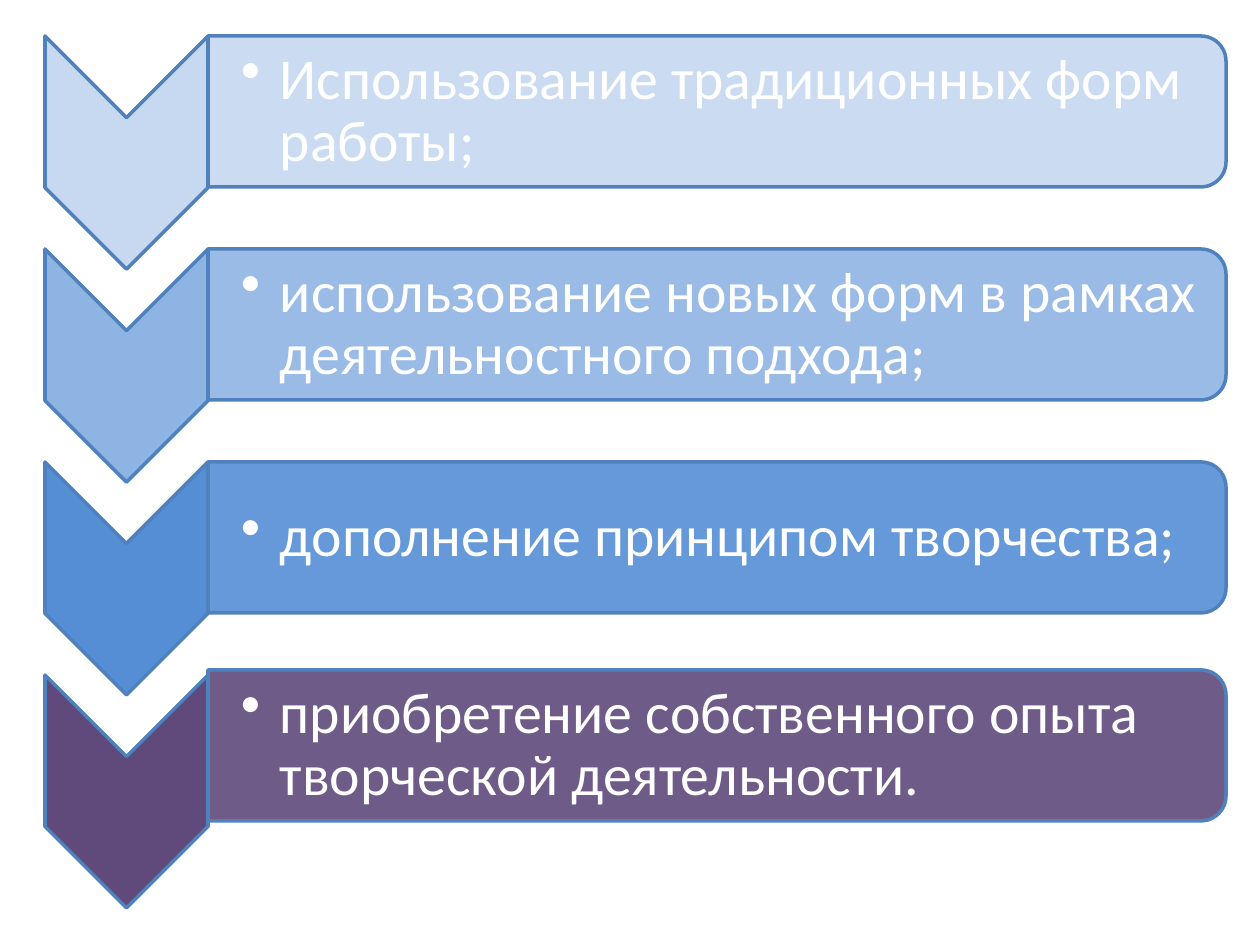
from lxml import etree
from pptx import Presentation
from pptx import util as u
from pptx.dml.color import RGBColor
from pptx.enum import shapes, text
from pptx.oxml.ns import qn

SCALE = 914400 / 126
LEFT, TOP, PITCH = 45, 36, 213
CHEVRON_WIDTH, CHEVRON_HEIGHT = 163, 233
BAR_LEFT, BAR_WIDTH, BAR_HEIGHT = 208, 1018, 151
INDENT = 39
STEPS = [
    ("Использование традиционных форм работы;", "C6D9F1", 0),
    ("использование новых форм в рамках деятельностного подхода;", "8EB4E3", 0),
    ("дополнение принципом творчества;", "558ED5", 0),
    ("приобретение собственного опыта творческой деятельности.", "604A7B", -5),
]


def px(length):
    """Turn pixels into EMU."""
    return u.Emu(round(length * SCALE))


def color(value):
    """Turn a hex string into a colour."""
    return RGBColor.from_string(value)


def add_turned_shape(page, kind, left, top, width, height, fill):
    """Add a shape turned clockwise by 90 degrees that covers the given area."""
    shift = (width - height) / 2
    shape = page.shapes.add_shape(
        kind, px(left + shift), px(top - shift), px(height), px(width))
    shape.rotation = 90
    shape.shadow.inherit = False
    shape.fill.solid()
    shape.fill.fore_color.rgb = color(fill)
    shape.line.color.rgb = color("4F81BD")
    shape.line.width = u.Pt(2)
    return shape


def set_opacity(shape, percent):
    """Make the solid fill of a shape partly transparent."""
    fill = shape.fill.fore_color._xFill.find(qn("a:srgbClr"))
    etree.SubElement(fill, qn("a:alpha"), val=str(percent * 1000))


def add_bullet(para):
    """Give a paragraph a round bullet with a hanging indent."""
    properties = para._p.get_or_add_pPr()
    properties.set("marL", str(px(INDENT)))
    properties.set("indent", str(-px(INDENT)))
    etree.SubElement(properties, qn("a:buChar"), char="•")


def add_label(page, top, wording):
    """Add the bulleted text of one step."""
    box = page.shapes.add_textbox(px(BAR_LEFT), px(top), px(1010), px(136))
    frame = box.text_frame
    frame.word_wrap = True
    frame.vertical_anchor = text.MSO_ANCHOR.MIDDLE
    frame.margin_left = px(33)
    frame.margin_top = frame.margin_right = frame.margin_bottom = px(3)
    frame.text = wording
    para = frame.paragraphs[0]
    para.level = 1
    para.line_spacing = 0.9
    add_bullet(para)
    font = para.runs[0].font
    font.name, font.size = "Calibri", u.Pt(33)
    font.color.rgb = color("FFFFFF")


def add_step(page, top, wording, fill, bar_shift):
    """Add a chevron with its bar and text."""
    kinds = shapes.MSO_SHAPE
    add_turned_shape(page, kinds.CHEVRON, LEFT, top,
                     CHEVRON_WIDTH, CHEVRON_HEIGHT, fill)
    bar_top = top + bar_shift
    bar = add_turned_shape(page, kinds.ROUND_2_SAME_RECTANGLE, BAR_LEFT, bar_top,
                           BAR_WIDTH, BAR_HEIGHT, fill)
    set_opacity(bar, 90)
    add_label(page, bar_top + 8, wording)


def main():
    """Build the slide and save it."""
    deck = Presentation()
    deck.slide_width, deck.slide_height = px(1260), px(945)
    page = deck.slides.add_slide(deck.slide_layouts[6])
    for row, (wording, fill, bar_shift) in enumerate(STEPS):
        add_step(page, TOP + row * PITCH, wording, fill, bar_shift)
    deck.save("out.pptx")


if __name__ == "__main__":
    main()
